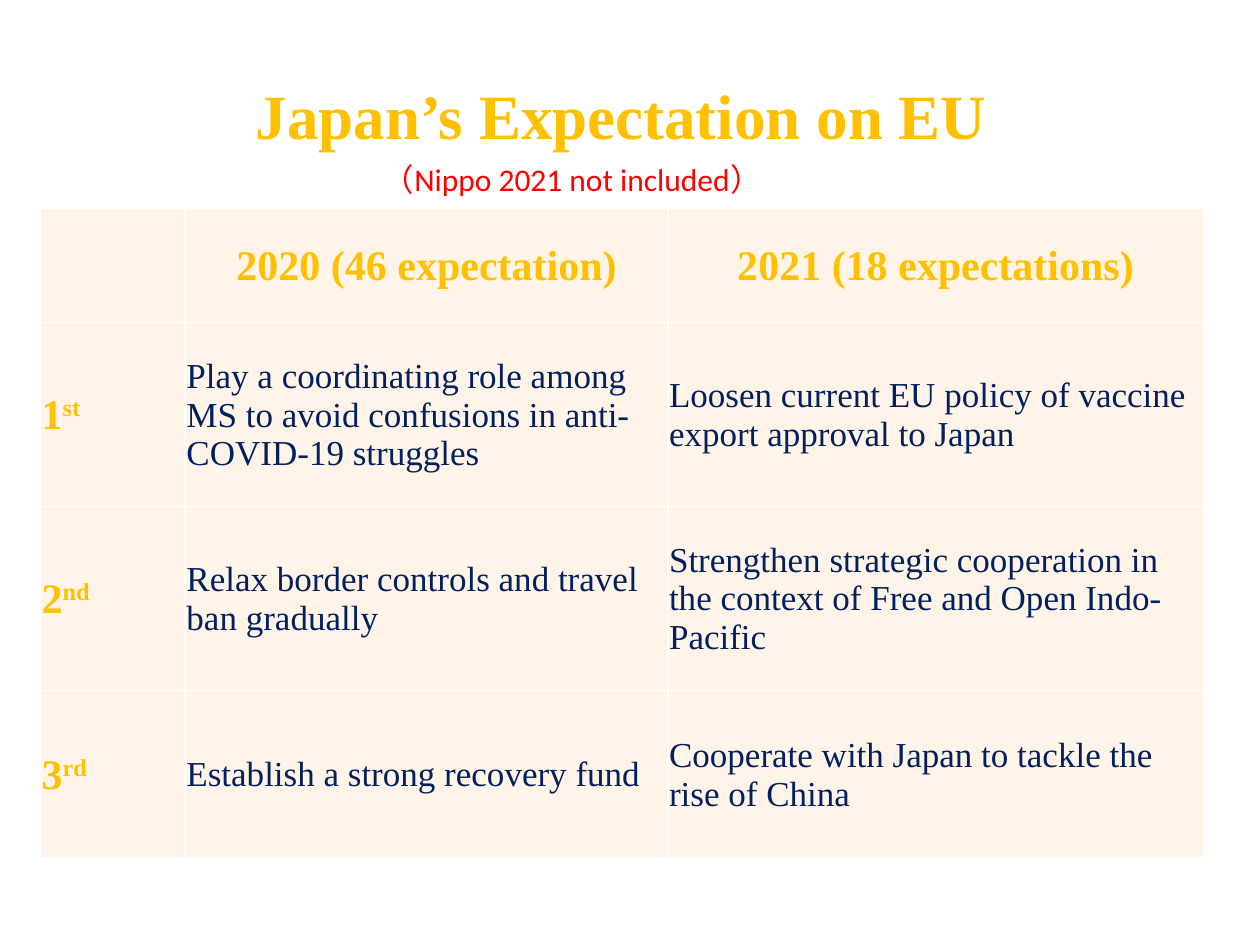
from lxml import etree
from pptx import Presentation
from pptx import util as u
from pptx.dml.color import RGBColor
from pptx.enum import text as t
from pptx.oxml import ns

GOLD = RGBColor(0xFF, 0xC0, 0x00)
NAVY = RGBColor(0x00, 0x20, 0x60)
RED = RGBColor(0xFF, 0x00, 0x00)
CREAM = RGBColor(0xFF, 0xF4, 0xE7)
WHITE = RGBColor(0xFF, 0xFF, 0xFF)
SERIF = "Times New Roman"

COLS = [1.15, 3.83, 4.25]
ROWS = [0.91, 1.46, 1.46, 1.33]
HEADS = ["2020 (46 expectation)", "2021 (18 expectations)"]
RANKS = [
    ("1", "st",
     "Play a coordinating role among MS to avoid confusions in anti-COVID-19 struggles",
     "Loosen current EU policy of vaccine export approval to Japan"),
    ("2", "nd",
     "Relax border controls and travel ban gradually",
     "Strengthen strategic cooperation in the context of Free and Open Indo-Pacific"),
    ("3", "rd",
     "Establish a strong recovery fund",
     "Cooperate with Japan to tackle the rise of China"),
]


def write(frame, words, size=20, color=NAVY, font=SERIF, bold=False,
          align=t.PP_ALIGN.LEFT, space=None, sup=""):
    """Fill the first paragraph; sup is a raised ending."""
    para = frame.paragraphs[0]
    para.alignment = align
    para.line_spacing = space
    for part in filter(None, (words, sup)):
        run = para.add_run()
        run.text = part
        run.font.size = u.Pt(size)
        run.font.name = font
        run.font.bold = bold
        run.font.color.rgb = color
    if sup:
        run.font._element.set("baseline", "30000")


def add_box(slide, left, top, width, height, words, anchor, **form):
    box = slide.shapes.add_textbox(*map(u.Inches, (left, top, width, height)))
    box.text_frame.word_wrap = True
    box.text_frame.vertical_anchor = anchor
    write(box.text_frame, words, **form)


def style(cell):
    """Give a cell white edges, a cream fill and tight margins."""
    props = cell._tc.get_or_add_tcPr()
    for side in ("lnL", "lnR", "lnT", "lnB"):
        line = etree.SubElement(props, ns.qn("a:" + side), w=str(u.Pt(1)))
        fill = etree.SubElement(line, ns.qn("a:solidFill"))
        etree.SubElement(fill, ns.qn("a:srgbClr"), val=str(WHITE))
    cell.fill.solid()
    cell.fill.fore_color.rgb = CREAM
    cell.vertical_anchor = t.MSO_ANCHOR.MIDDLE
    cell.margin_left = cell.margin_right = cell.margin_top = u.Inches(0.01)
    cell.margin_bottom = 0


def add_grid(slide, left, top):
    size = map(u.Inches, (left, top, sum(COLS), sum(ROWS)))
    table = slide.shapes.add_table(len(ROWS), len(COLS), *size).table
    for col, width in zip(table.columns, COLS):
        col.width = u.Inches(width)
    for row, height in zip(table.rows, ROWS):
        row.height = u.Inches(height)
    for cell in table.iter_cells():
        style(cell)

    label = dict(size=24, color=GOLD, bold=True)
    for c, head in enumerate(HEADS, 1):
        write(table.cell(0, c).text_frame, head, align=t.PP_ALIGN.CENTER, **label)
    for r, (rank, sup, *wishes) in enumerate(RANKS, 1):
        write(table.cell(r, 0).text_frame, rank, sup=sup, **label)
        for c, wish in enumerate(wishes, 1):
            write(table.cell(r, c).text_frame, wish)


def main():
    deck = Presentation()
    deck.slide_width, deck.slide_height = u.Inches(10), u.Inches(7.5)
    slide = deck.slides.add_slide(deck.slide_layouts[6])
    add_box(slide, 0.25, 0.47, 9.36, 0.95, "Japan’s Expectation on EU",
            t.MSO_ANCHOR.MIDDLE, size=36, color=GOLD, bold=True,
            align=t.PP_ALIGN.CENTER, space=0.9)
    add_grid(slide, 0.32, 1.65)
    add_box(slide, 2.94, 1.22, 5, 0.4, "（Nippo 2021 not included）",
            t.MSO_ANCHOR.TOP, size=18, color=RED, font="Calibri")
    deck.save("out.pptx")


if __name__ == "__main__":
    main()
